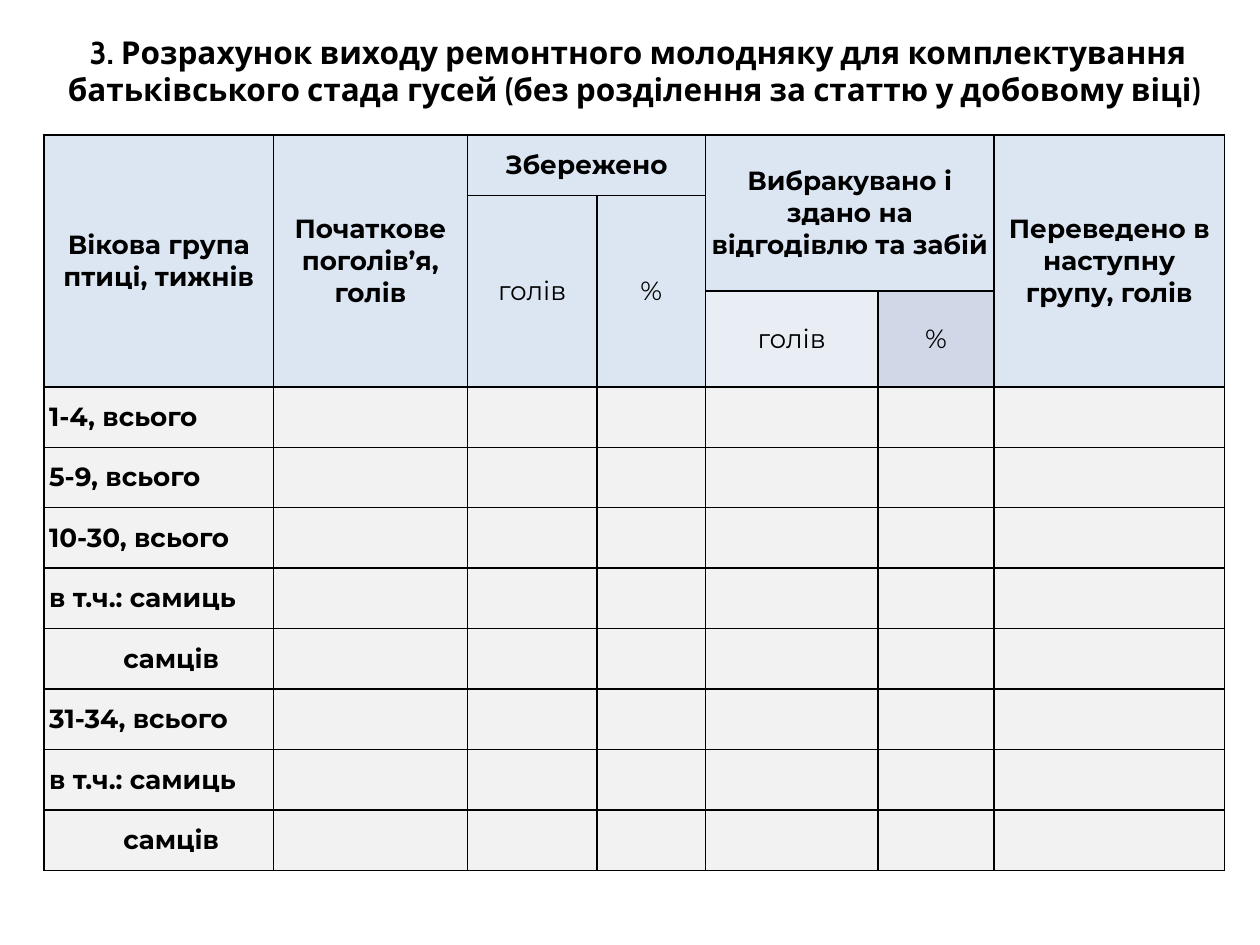
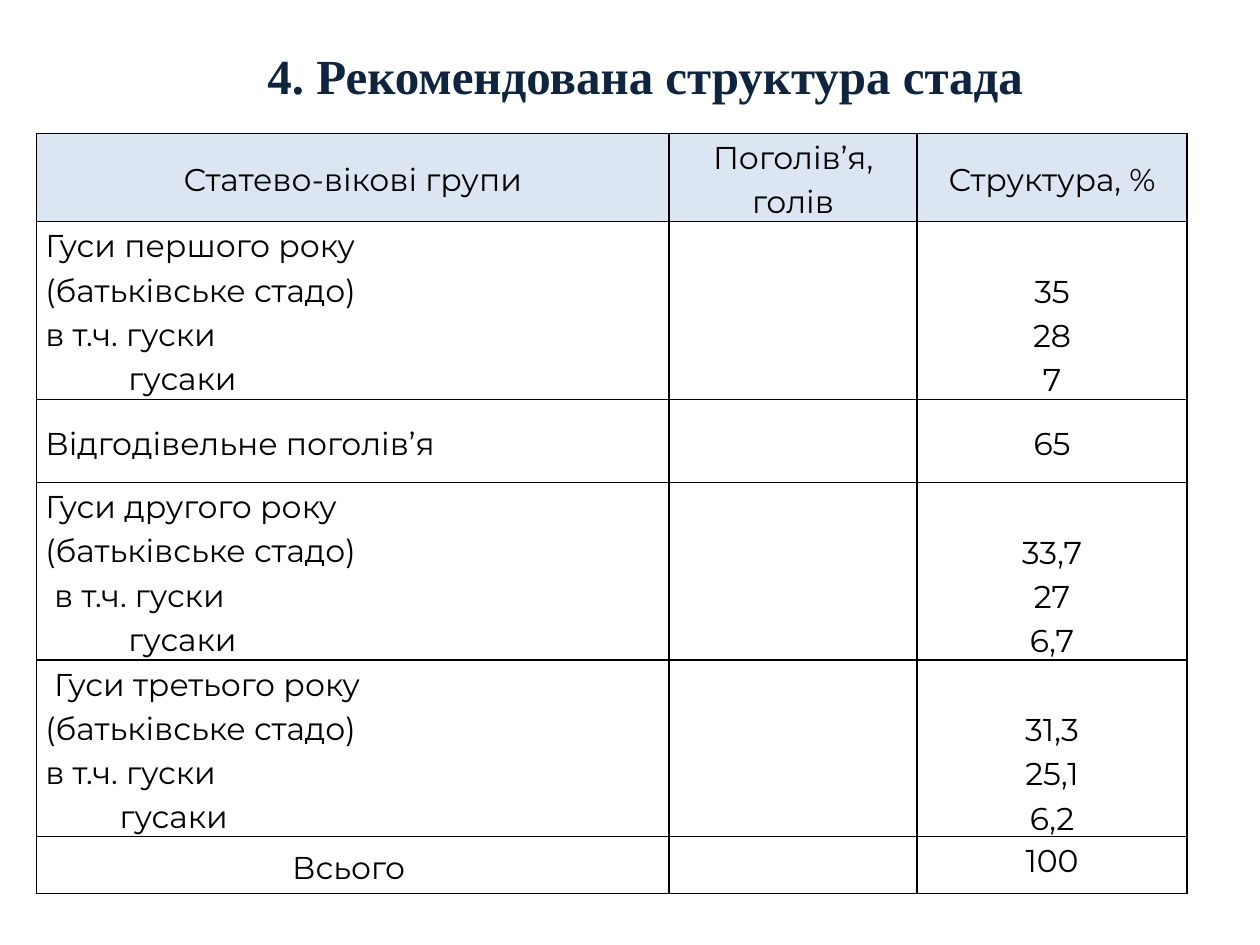
from lxml import etree
from pptx import Presentation
from pptx.dml.color import RGBColor
from pptx.enum.text import MSO_ANCHOR as Anchor, PP_ALIGN as Align
from pptx.oxml.ns import qn
from pptx.util import Inches, Pt

HUE = {"ink": "000000", "navy": "0F243E", "head": "DCE6F2",
       "pale": "E9EDF4", "mist": "D0D8E8", "gray": "F2F2F2"}
BODY = "Montserrat"


def paint(fill, hue):
    if hue:
        fill.solid()
        fill.fore_color.rgb = RGBColor.from_string(HUE[hue])
    else:
        fill.background()


def style(para, face, size, bold=False, hue="ink", align=Align.LEFT):
    para.alignment = align
    font = para.font
    font.name, font.size, font.bold = face, Pt(size), bold
    font.color.rgb = RGBColor.from_string(HUE[hue])


def indent(para, left=0, first=0):
    props = para._p.get_or_add_pPr()
    props.set("marL", str(Inches(left)))
    props.set("indent", str(Inches(first)))


def border(cell):
    props = cell._tc.get_or_add_tcPr()
    for side in ("a:lnL", "a:lnR", "a:lnT", "a:lnB"):
        line = etree.SubElement(props, qn(side), w=str(Pt(1)))
        fill = etree.SubElement(line, qn("a:solidFill"))
        etree.SubElement(fill, qn("a:srgbClr"), val=HUE["ink"])


def title(slide, box, words, face, size, hue, anchor, first=0):
    frame = slide.shapes.add_textbox(*map(Inches, box)).text_frame
    frame.word_wrap = True
    frame.vertical_anchor = anchor
    para = frame.paragraphs[0]
    para.text = words
    style(para, face, size, True, hue, Align.CENTER)
    indent(para, first=first)


def grid(slide, spot, cols, rows, side):
    size = sum(cols), sum(rows)
    table = slide.shapes.add_table(
        len(rows), len(cols), *map(Inches, spot + size)).table
    table.first_row = table.horz_banding = False
    for col, width in zip(table.columns, cols):
        col.width = Inches(width)
    for row, height in zip(table.rows, rows):
        row.height = Inches(height)
    for cell in table.iter_cells():
        border(cell)
        paint(cell.fill, None)
        cell.margin_left = cell.margin_right = Inches(side)
        cell.margin_top = cell.margin_bottom = 0
        cell.vertical_anchor = Anchor.MIDDLE
    return table


def write(cell, lines, size, bold=False, align=Align.LEFT, space=None):
    cell.text = "\n".join(words for words, _ in lines)
    for para, (_, left) in zip(cell.text_frame.paragraphs, lines):
        style(para, BODY, size, bold, align=align)
        para.line_spacing = space
        if left:
            indent(para, left)


def young(slide, box):
    table = grid(slide, box, (1.82, 1.54, 1.03, 0.86, 1.37, 0.92, 1.83),
                 (0.48, 0.76, 0.76) + (0.48,) * 8, 0.04)
    heads = [
        (0, 0, 3, 1, "Вікова група птиці, тижнів", True, "head"),
        (0, 1, 3, 1, "Початкове поголів’я, голів", True, "head"),
        (0, 2, 1, 2, "Збережено", True, "head"),
        (0, 4, 2, 2, "Вибракувано і здано на відгодівлю та забій", True, "head"),
        (0, 6, 3, 1, "Переведено в наступну групу, голів", True, "head"),
        (1, 2, 2, 1, "голів", False, "head"),
        (1, 3, 2, 1, "%", False, "head"),
        (2, 4, 1, 1, "голів", False, "pale"),
        (2, 5, 1, 1, "%", False, "mist"),
    ]
    for row, col, tall, wide, words, bold, hue in heads:
        cell = table.cell(row, col)
        if tall * wide > 1:
            cell.merge(table.cell(row + tall - 1, col + wide - 1))
        paint(cell.fill, hue)
        write(cell, [(words, 0)], 15, bold, Align.CENTER)
    split = [("в т.ч.: самиць", 0), ("самців", 0.59)]
    ages = [("1-4, всього", 0), ("5-9, всього", 0), ("10-30, всього", 0),
            *split, ("31-34, всього", 0), *split]
    for row, line in enumerate(ages, 3):
        for col in range(7):
            paint(table.cell(row, col).fill, "gray")
        write(table.cell(row, 0), [line], 15, True)


def flock(slide, box):
    table = grid(slide, box, (5.02, 1.97, 2.14),
                 (0.7, 1.41, 0.66, 1.41, 1.4, 0.45), 0.07)
    space = 1.15
    for col, words in enumerate(
            ("Статево-вікові групи", "Поголів’я, голів", "Структура, %")):
        cell = table.cell(0, col)
        paint(cell.fill, "head")
        write(cell, [(words, 0)], 18, align=Align.CENTER, space=space)
    years = [
        (1, "першого", (0, 0, 0.66), ("35", "28", "7")),
        (3, "другого", (0, 0.07, 0.66), ("33,7", "27", "6,7")),
        (4, "третього", (0.07, 0, 0.59), ("31,3", "25,1", "6,2")),
    ]
    for row, year, (top, hens, males), parts in years:
        name, share = table.cell(row, 0), table.cell(row, 2)
        name.vertical_anchor = share.vertical_anchor = Anchor.TOP
        write(name, [(f"Гуси {year} року", top), ("(батьківське стадо)", 0),
                     ("в т.ч. гуски", hens), ("гусаки", males)], 18, space=space)
        share.margin_top = Inches(0.36)
        write(share, [(part, 0) for part in parts], 18,
              align=Align.CENTER, space=space)
    for row, words, align, part in ((2, "Відгодівельне поголів’я", Align.LEFT, "65"),
                                    (5, "Всього ", Align.CENTER, "100")):
        write(table.cell(row, 0), [(words, 0)], 18, align=align, space=space)
        write(table.cell(row, 2), [(part, 0)], 18, align=Align.CENTER, space=space)
    table.cell(5, 2).vertical_anchor = Anchor.TOP


def main():
    deck = Presentation()
    deck.slide_width, deck.slide_height = Inches(10), Inches(7.5)
    blank = deck.slide_layouts[6]
    slide = deck.slides.add_slide(blank)
    title(slide, (0.13, 0.21, 9.87, 0.66),
          "3. Розрахунок виходу ремонтного молодняку для комплектування "
          "батьківського стада гусей (без розділення за статтю у добовому віці) ",
          "Cabin", 18, "ink", Anchor.TOP)
    young(slide, (0.35, 1.07))
    slide = deck.slides.add_slide(blank)
    flock(slide, (0.29, 1.06))
    title(slide, (0.43, 0.31, 8.99, 0.57), "4. Рекомендована структура стада",
          "Times New Roman", 28, "navy", Anchor.MIDDLE, 0.39)
    deck.save("out.pptx")


if __name__ == "__main__":
    main()
